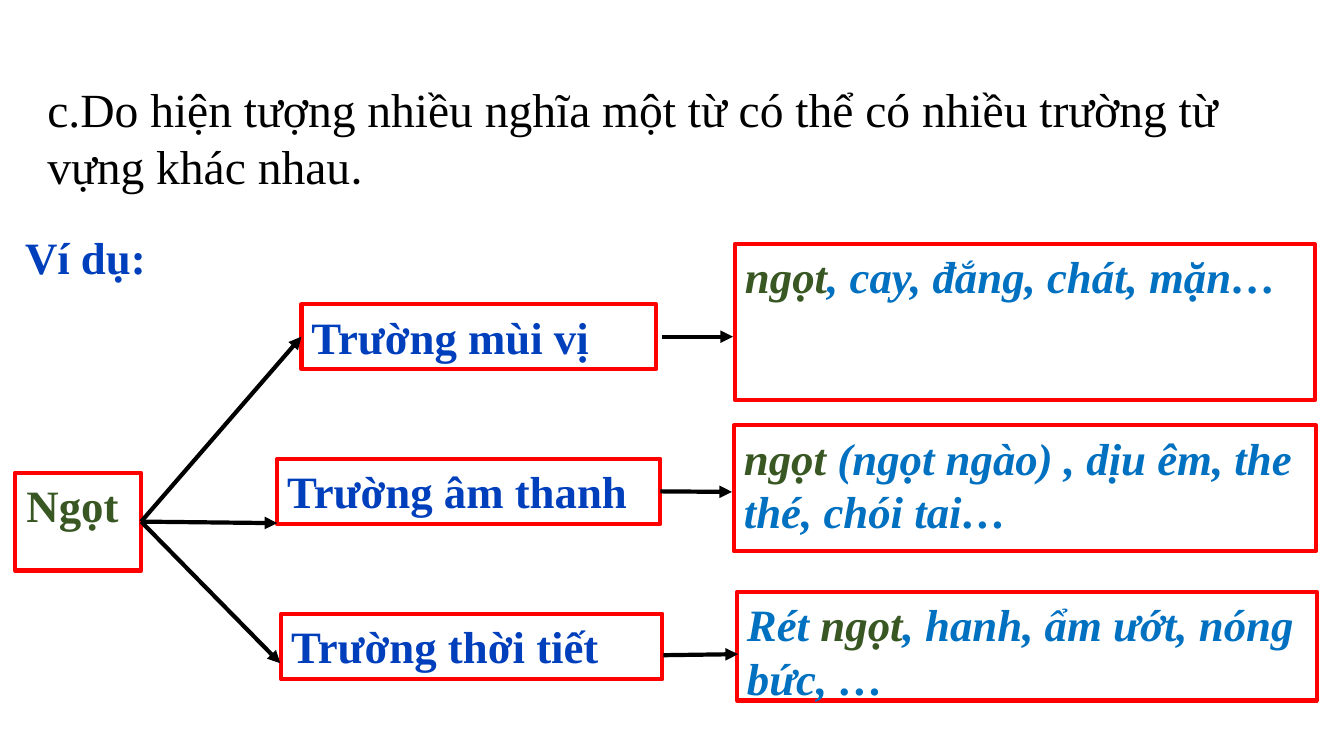
"""Build a slide showing the lexical fields of one word with several meanings."""
from dataclasses import dataclass

from lxml import etree
from pptx import Presentation
from pptx.dml import color as dml_color
from pptx.enum import shapes, text
from pptx.oxml import ns
from pptx.util import Inches, Pt

COLORS = {"border": "FF0000", "arrow": "000000", "title": "000000",
          "word": "385723", "field": "003FBC", "example": "0070C0"}
SERIF = "Times New Roman"
RIGHT, LEFT = 3, 1


@dataclass(frozen=True)
class Run:
    content: str
    color: str
    size: int = 32
    bold: bool = True
    italic: bool = False
    font: str = SERIF


@dataclass(frozen=True)
class Box:
    key: str
    bounds: tuple[float, float, float, float]
    runs: tuple[Run, ...]
    align: text.PP_ALIGN = text.PP_ALIGN.LEFT


@dataclass(frozen=True)
class Arrow:
    start: tuple[float, float]
    end: tuple[float, float]
    source: str = ""
    target: str = ""


def example(content: str, color: str = "example") -> Run:
    return Run(content, color, italic=True)


TITLE = Box("title", (0.37, 0.74, 12.67, 1.24), (
    Run("c.Do hiện tượng nhiều nghĩa một từ có thể có nhiều trường từ vựng khác nhau",
        "title", 34, False),
    Run(".", "title", 34, False, font="Calibri")))
LABEL = Box("label", (0.15, 2.23, 1.56, 0.64), (Run("Ví dụ:", "field"),))
BOXES = (
    Box("word", (0.15, 4.69, 1.25, 0.97), (Run("Ngọt ", "word"),), text.PP_ALIGN.CENTER),
    Box("taste", (2.99, 3.02, 3.52, 0.64), (Run("Trường mùi vị", "field"),)),
    Box("sound", (2.75, 4.55, 3.8, 0.65), (Run("Trường âm thanh", "field"),)),
    Box("weather", (2.79, 6.09, 3.78, 0.65), (Run("Trường thời tiết", "field"),)),
    Box("taste words", (7.29, 2.42, 5.75, 1.55),
        (example("ngọt", "word"), example(", cay, đắng, chát, mặn…"))),
    Box("sound words", (7.28, 4.22, 5.77, 1.25),
        (example("ngọt ", "word"), example("(ngọt ngào) , dịu êm, the thé, chói tai…"))),
    Box("weather words", (7.31, 5.87, 5.75, 1.08),
        (example("Rét "), example("ngọt", "word"), example(", hanh, ẩm ướt, nóng bức, …"))),
)
WORD_EDGE = (1.4, 5.18)
ARROWS = (
    Arrow(WORD_EDGE, (2.99, 3.34), "word", "taste"),
    Arrow(WORD_EDGE, (2.75, 5.19), "word"),
    Arrow(WORD_EDGE, (2.78, 6.58), "word"),
    Arrow((6.57, 3.34), (7.27, 3.34)),
    Arrow((6.55, 4.87), (7.26, 4.88), "sound"),
    Arrow((6.58, 6.5), (7.32, 6.49)),
)


def rgb(name: str) -> dml_color.RGBColor:
    return dml_color.RGBColor.from_string(COLORS[name])


def write(shape, box: Box) -> None:
    frame = shape.text_frame
    frame.word_wrap = True
    frame.auto_size = text.MSO_AUTO_SIZE.NONE
    frame.vertical_anchor = text.MSO_ANCHOR.TOP
    paragraph = frame.paragraphs[0]
    paragraph.alignment = box.align
    for item in box.runs:
        run = paragraph.add_run()
        run.text = item.content
        font = run.font
        font.name, font.size = item.font, Pt(item.size)
        font.bold, font.italic = item.bold, item.italic
        font.color.rgb = rgb(item.color)


def add_box(slide, box: Box):
    shape = slide.shapes.add_shape(shapes.MSO_SHAPE.RECTANGLE, *map(Inches, box.bounds))
    shape.shadow.inherit = False
    shape.fill.background()
    shape.line.color.rgb = rgb("border")
    shape.line.width = Pt(3)
    write(shape, box)
    return shape


def add_arrow(slide, arrow: Arrow, drawn: dict) -> None:
    connector = slide.shapes.add_connector(
        shapes.MSO_CONNECTOR.STRAIGHT, *map(Inches, arrow.start + arrow.end))
    if arrow.source:
        connector.begin_connect(drawn[arrow.source], RIGHT)
    if arrow.target:
        connector.end_connect(drawn[arrow.target], LEFT)
    connector.line.color.rgb = rgb("arrow")
    connector.line.width = Pt(3)
    properties = connector._element.spPr
    etree.SubElement(properties.find(ns.qn("a:ln")), ns.qn("a:tailEnd"), type="triangle")
    etree.SubElement(properties, ns.qn("a:effectLst"))


def main() -> None:
    presentation = Presentation()
    presentation.slide_width, presentation.slide_height = Inches(13.33), Inches(7.5)
    slide = presentation.slides.add_slide(presentation.slide_layouts[5])
    title = slide.shapes.title
    title.left, title.top, title.width, title.height = map(Inches, TITLE.bounds)
    write(title, TITLE)
    write(slide.shapes.add_textbox(*map(Inches, LABEL.bounds)), LABEL)
    drawn = {box.key: add_box(slide, box) for box in BOXES}
    for arrow in ARROWS:
        add_arrow(slide, arrow, drawn)
    presentation.save("out.pptx")


if __name__ == "__main__":
    main()
